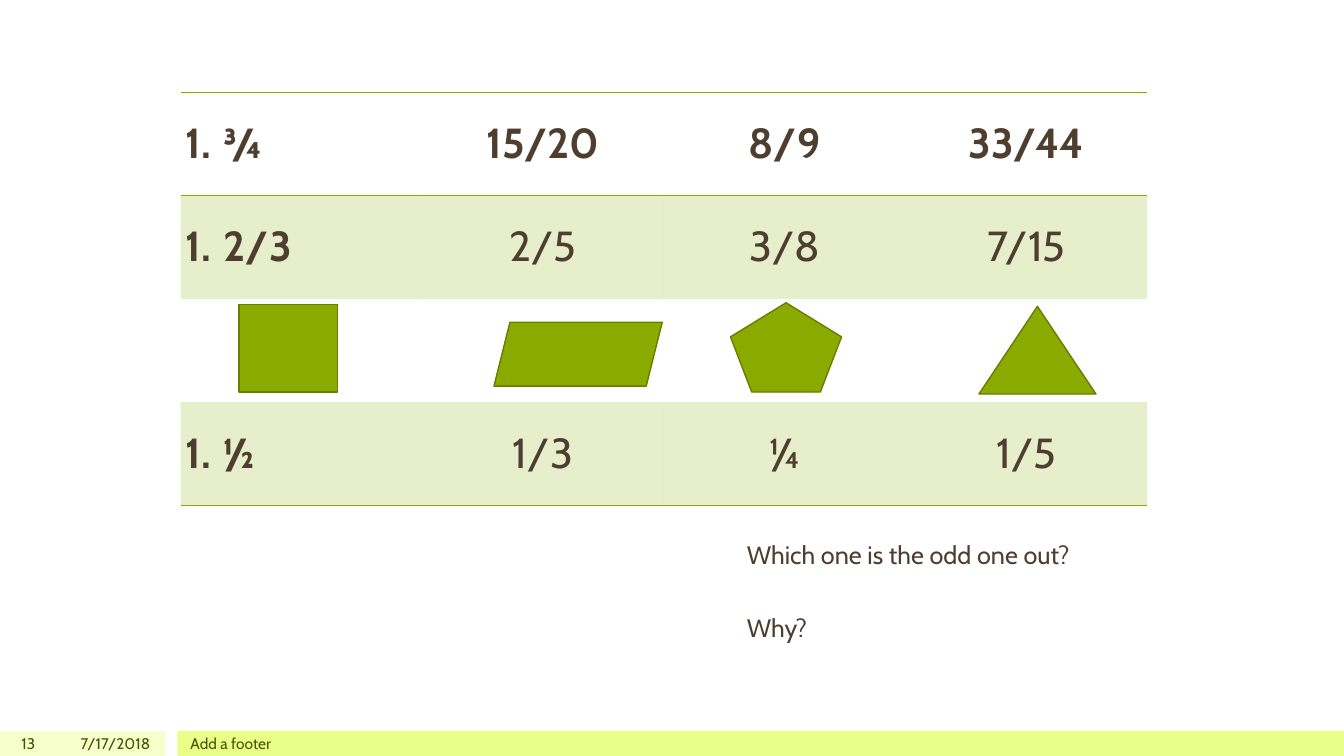
"""Build the odd-one-out slide with fractions and shapes."""
from lxml import etree
from pptx import Presentation, util as u
from pptx.dml.color import RGBColor
from pptx.enum import shapes, text
from pptx.oxml.ns import qn

GREEN = RGBColor(0x8B, 0xAA, 0x00)
EDGE = RGBColor(0x67, 0x7E, 0x00)
BROWN = RGBColor(0x4D, 0x3E, 0x2F)
OLIVE = RGBColor(0x45, 0x55, 0x00)
PALE = RGBColor(0xF6, 0xFF, 0xCC)
LIME = RGBColor(0xE9, 0xFF, 0x88)
NOGRID = "{2D5ABB26-0587-4C30-8999-92F81FD0307C}"


def write(para, words, size, color, bold=False):
    run = para.add_run()
    run.text = words
    run.font.name = "Cabin"
    run.font.size = u.Pt(size)
    run.font.bold = bold
    run.font.color.rgb = color


def draw(kind, place, fill, line=None):
    shape = slide.shapes.add_shape(kind, *map(u.Cm, place))
    shape.shadow.inherit = False
    shape.fill.solid()
    shape.fill.fore_color.rgb = fill
    if line is None:
        shape.line.fill.background()
    else:
        shape.line.color.rgb = line
        shape.line.width = u.Pt(1)


prs = Presentation()
prs.slide_width, prs.slide_height = u.Cm(33.87), u.Cm(19.05)
slide = prs.slides.add_slide(prs.slide_layouts[6])
kinds = shapes.MSO_SHAPE

draw(kinds.RECTANGLE, (0, 18.42, 4.17, 0.63), PALE)
draw(kinds.RECTANGLE, (4.47, 18.42, 29.4, 0.63), LIME)

rows = [
    ("¾", "15/20", "8/9", "33/44"),
    ("2/3", "2/5", "3/8", "7/15"),
    ("", "", "", ""),
    ("½", "1/3", "¼", "1/5"),
]
rules = {0: ("a:lnT", "a:lnB"), 3: ("a:lnB",)}
frame = slide.shapes.add_table(
    4, 4, u.Cm(4.55), u.Cm(2.33), u.Cm(24.36), u.Cm(10.4))
table = frame.table
table.first_row = table.horz_banding = False
table._tbl.tblPr.find(qn("a:tableStyleId")).text = NOGRID
for col in table.columns:
    col.width = u.Cm(6.09)
for i, row in enumerate(rows):
    table.rows[i].height = u.Cm(2.6)
    for j, words in enumerate(row):
        cell = table.cell(i, j)
        cell.margin_left = cell.margin_right = u.Cm(0.13)
        cell.margin_top = cell.margin_bottom = 0
        props = cell._tc.get_or_add_tcPr()
        for side in rules.get(i, ()):
            rule = etree.SubElement(props, qn(side), w=str(u.Pt(1)))
            solid = etree.SubElement(rule, qn("a:solidFill"))
            etree.SubElement(solid, qn("a:srgbClr"), val=str(GREEN))
        if i % 2:
            cell.fill.solid()
            cell.fill.fore_color.rgb = GREEN
            tint = props.find(".//" + qn("a:solidFill") + "[last()]")
            tint = props.findall(qn("a:solidFill"))[-1][0]
            etree.SubElement(tint, qn("a:alpha"), val="20000")
        else:
            cell.fill.background()
        if not words:
            continue
        para = cell.text_frame.paragraphs[0]
        para.line_spacing = 1.5
        if j:
            para.alignment = text.PP_ALIGN.CENTER
        else:
            form = para._p.get_or_add_pPr()
            form.set("marL", str(u.Cm(0.96)))
            form.set("indent", str(-u.Cm(0.96)))
            etree.SubElement(form, qn("a:buFont"), typeface="+mj-lt")
            etree.SubElement(form, qn("a:buAutoNum"), type="arabicPeriod")
        write(para, words, 30, BROWN, i == 0 or j == 0)

box = slide.shapes.add_textbox(u.Cm(18.57), u.Cm(13.6), u.Cm(11.53), u.Cm(3))
box.text_frame.word_wrap = True
ask = box.text_frame.paragraphs[0]
why = box.text_frame.add_paragraph()
why.space_before = u.Pt(35)
for para, words in ((ask, "Which one is the odd one out?"), (why, "Why?")):
    para.line_spacing = 0.8
    write(para, words, 18, BROWN)

right, left = text.PP_ALIGN.RIGHT, text.PP_ALIGN.LEFT
for x, width, side, words in (
    (0, 1.14, right, "13"),
    (1.27, 2.77, right, "7/17/2018"),
    (4.55, 25.4, left, "Add a footer"),
):
    box = slide.shapes.add_textbox(
        u.Cm(x), u.Cm(18.42), u.Cm(width), u.Cm(0.63))
    box.text_frame.word_wrap = True
    box.text_frame.vertical_anchor = text.MSO_ANCHOR.MIDDLE
    para = box.text_frame.paragraphs[0]
    para.alignment = side
    write(para, words, 11, OLIVE)

for kind, place in (
    (kinds.RECTANGLE, (6.02, 7.68, 2.49, 2.2)),
    (kinds.ISOSCELES_TRIANGLE, (24.67, 7.72, 2.95, 2.21)),
    (kinds.REGULAR_PENTAGON, (18.41, 7.63, 2.8, 2.25)),
    (kinds.PARALLELOGRAM, (12.45, 8.12, 4.24, 1.61)),
):
    draw(kind, place, GREEN, EDGE)

prs.save("out.pptx")
